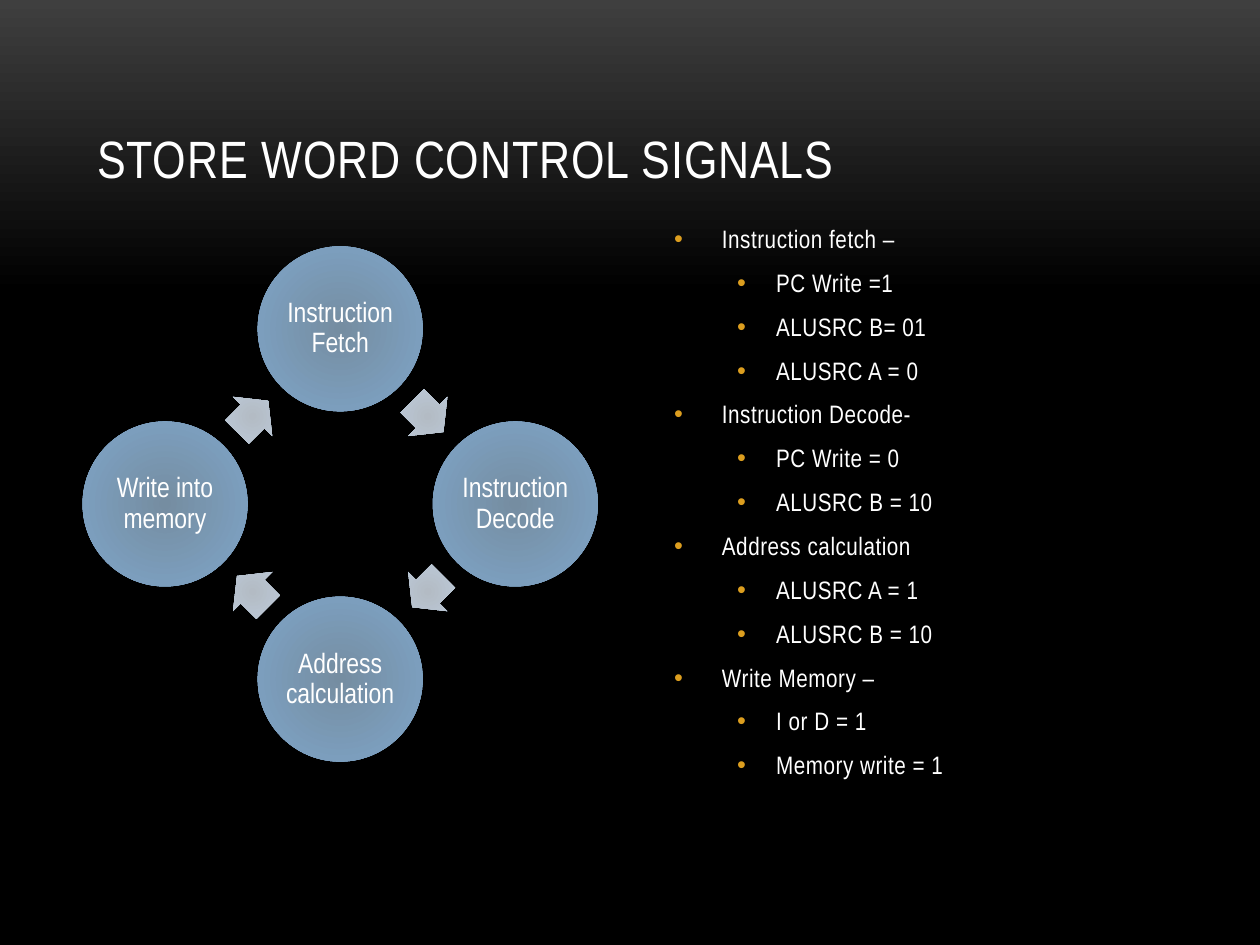
from math import cos, radians, sin

from lxml.etree import SubElement
from pptx import Presentation
from pptx.dml.color import RGBColor
from pptx.enum.shapes import MSO_SHAPE
from pptx.enum.text import MSO_ANCHOR, MSO_AUTO_SIZE, PP_ALIGN
from pptx.oxml.ns import qn
from pptx.util import Inches, Pt

# Content
TITLE = "STORE WORD CONTROL SIGNALS"
STAGES = ["Instruction Fetch", "Instruction Decode",
          "Address calculation", "Write into memory"]
SIGNALS = [
    ("Instruction fetch –", ["PC Write =1", "ALUSRC B= 01", "ALUSRC A = 0"]),
    ("Instruction Decode-", ["PC Write = 0", "ALUSRC B = 10"]),
    ("Address calculation", ["ALUSRC A = 1", "ALUSRC B = 10"]),
    ("Write Memory –", ["I or D = 1", "Memory write = 1"]),
]

# Style
FONT, WHITE, GOLD = "Arial Narrow", "FFFFFF", "DC9E1F"
BACKDROP = [(0, "3F3F3F"), (31, "000000"), (100, "000000")]
CIRCLE_FILL = [(0, "758DA1"), (100, "7FA6CA")]
ARROW_FILL = [(0, "B3BBC4"), (100, "BFCFE0")]
INDENTS = [(0.38, -0.38), (0.81, -0.31)]  # left margin, first line

# Cycle geometry, in inches
CENTER_X, CENTER_Y, RING = 2.7, 4.0, 1.39
CIRCLE, ARROW_W, ARROW_H = 1.31, 0.35, 0.44


def rgb(value):
    return RGBColor.from_string(value)


def set_gradient(owner, fill, stops, angle=None):
    """Fill with a linear gradient, or a circular one when no angle is given."""
    fill.gradient()
    grad = owner.element.find(".//" + qn("a:gradFill"))
    for child in list(grad):
        grad.remove(child)
    gs_list = SubElement(grad, qn("a:gsLst"))
    for position, color in stops:
        gs = SubElement(gs_list, qn("a:gs"), pos=str(position * 1000))
        SubElement(gs, qn("a:srgbClr"), val=color)
    if angle is None:
        path_el = SubElement(grad, qn("a:path"), path="circle")
        SubElement(path_el, qn("a:fillToRect"),
                   dict.fromkeys("ltrb", "50000"))
    else:
        SubElement(grad, qn("a:lin"), ang=str(angle * 60000), scaled="0")


def write(p, text, size, align=PP_ALIGN.LEFT, line=None, before=0, after=0,
          spacing=0):
    p.alignment, p.line_spacing = align, line
    p.space_before, p.space_after = Pt(before), Pt(after)
    r = p.add_run()
    r.text = text
    r.font.name, r.font.size = FONT, Pt(size)
    r.font.color.rgb = rgb(WHITE)
    if spacing:
        r.font._element.set("spc", str(round(spacing * 100)))


def add_bullet(p, level):
    left, first = INDENTS[level]
    p.level = level
    pPr = p._p.get_or_add_pPr()
    pPr.set("marL", str(Inches(left)))
    pPr.set("indent", str(Inches(first)))
    color = SubElement(pPr, qn("a:buClr"))
    SubElement(color, qn("a:srgbClr"), val=GOLD)
    SubElement(pPr, qn("a:buFont"), typeface="Arial")
    SubElement(pPr, qn("a:buChar"), char="•")


def place(sp, left, top, width, height):
    sp.left, sp.top = Inches(left), Inches(top)
    sp.width, sp.height = Inches(width), Inches(height)


def add_on_ring(slide, kind, angle, distance, width, height, stops):
    """Add a shape centred on the ring, clockwise from the top."""
    x = CENTER_X + distance * sin(radians(angle))
    y = CENTER_Y - distance * cos(radians(angle))
    sp = slide.shapes.add_shape(kind, Inches(x - width / 2),
                                Inches(y - height / 2),
                                Inches(width), Inches(height))
    set_gradient(sp, sp.fill, stops)
    sp.line.fill.background()
    sp.shadow.inherit = False
    return sp


def add_cycle(slide):
    step = 360 / len(STAGES)
    for i, stage in enumerate(STAGES):
        angle = i * step
        circle = add_on_ring(slide, MSO_SHAPE.OVAL, angle, RING,
                             CIRCLE, CIRCLE, CIRCLE_FILL)
        tf = circle.text_frame
        tf.word_wrap = True
        tf.vertical_anchor = MSO_ANCHOR.MIDDLE
        tf.margin_left = tf.margin_right = Inches(0.02)
        tf.margin_top = tf.margin_bottom = Inches(0.02)
        write(tf.paragraphs[0], stage, 16, align=PP_ALIGN.CENTER, line=0.9)

        # Arrow halfway to the next stage
        middle = angle + step / 2
        arrow = add_on_ring(slide, MSO_SHAPE.RIGHT_ARROW, middle,
                            RING * cos(radians(step / 2)),
                            ARROW_W, ARROW_H, ARROW_FILL)
        arrow.adjustments[0], arrow.adjustments[1] = 0.6, 0.5
        arrow.rotation = middle


def main():
    prs = Presentation()
    prs.slide_width, prs.slide_height = Inches(10), Inches(7.5)
    slide = prs.slides.add_slide(prs.slide_layouts[1])
    set_gradient(slide, slide.background.fill, BACKDROP, angle=90)

    # Title
    title = slide.shapes.title
    place(title, 0.67, 0.3, 8.67, 1.25)
    tf = title.text_frame
    tf.auto_size = MSO_AUTO_SIZE.NONE
    tf.vertical_anchor = MSO_ANCHOR.BOTTOM
    write(tf.paragraphs[0], TITLE, 30, spacing=0.5)

    # Control signals
    body = slide.placeholders[1]
    place(body, 5.25, 1.75, 4.08, 4.5)
    tf = body.text_frame
    tf.auto_size = MSO_AUTO_SIZE.NONE
    lines = [(level, text) for stage, signals in SIGNALS
             for level, text in [(0, stage)] + [(1, s) for s in signals]]
    for i, (level, text) in enumerate(lines):
        p = tf.add_paragraph() if i else tf.paragraphs[0]
        add_bullet(p, level)
        write(p, text, 14.4, line=0.9, before=3.5 if i else 0, after=6,
              spacing=0.3)

    add_cycle(slide)
    prs.save("out.pptx")


if __name__ == "__main__":
    main()
